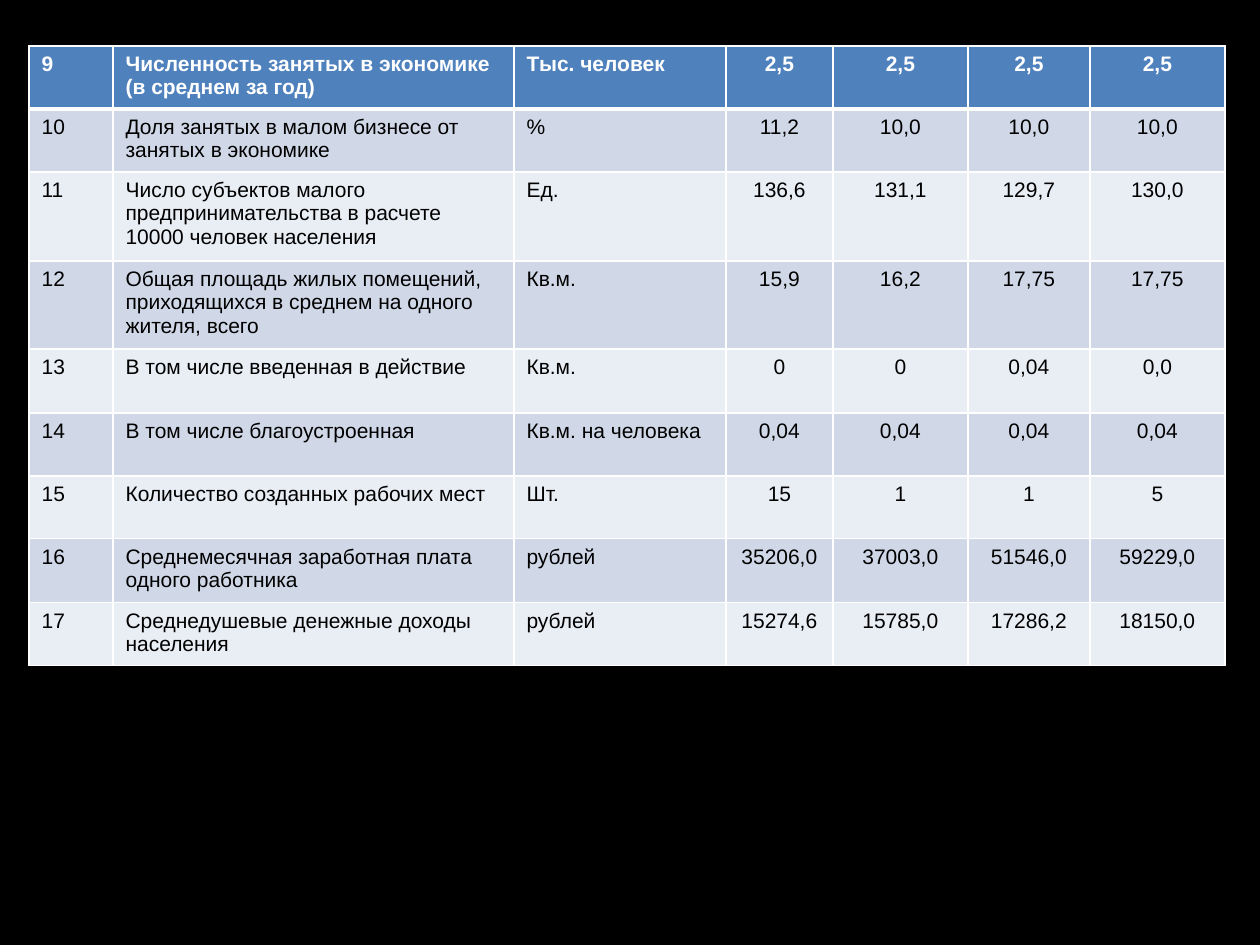
from lxml.etree import SubElement
from pptx import Presentation
from pptx.dml.color import RGBColor as Rgb
from pptx.enum.text import PP_ALIGN as Align
from pptx.oxml.ns import qn
from pptx.util import Pt

INDICATORS = [
    ("9", "Численность занятых в экономике (в среднем за год)", "Тыс. человек", "2,5", "2,5", "2,5", "2,5"),
    ("10", "Доля занятых в малом бизнесе от занятых в экономике", "%", "11,2", "10,0", "10,0", "10,0"),
    ("11", "Число субъектов малого предпринимательства в расчете 10000 человек населения", "Ед.",
     "136,6", "131,1", "129,7", "130,0"),
    ("12", "Общая площадь жилых помещений, приходящихся в среднем на одного жителя, всего", "Кв.м.",
     "15,9", "16,2", "17,75", "17,75"),
    ("13", "В том числе введенная в действие", "Кв.м.", "0", "0", "0,04", "0,0"),
    ("14", "В том числе благоустроенная", "Кв.м. на человека", "0,04", "0,04", "0,04", "0,04"),
    ("15", "Количество созданных рабочих мест", "Шт.", "15", "1", "1", "5"),
    ("16", "Среднемесячная заработная плата одного работника", "рублей",
     "35206,0", "37003,0", "51546,0", "59229,0"),
    ("17", "Среднедушевые денежные доходы населения", "рублей",
     "15274,6", "15785,0", "17286,2", "18150,0"),
]
COLORS = {
    "background": "000000", "header": "4F81BD", "odd": "D0D8E8", "even": "E9EDF4",
    "header_text": "FFFFFF", "text": "000000", "border": "FFFFFF",
}
COLUMN_WIDTHS = [84, 401, 212, 107, 135, 122, 135]
ROW_HEIGHTS = [63, 63, 89, 88, 64, 63, 63, 64, 63]
LEFT, TOP = 29, 46
FIRST_VALUE_COLUMN = 3
PX = 914400 // 126


def color(key):
    return Rgb.from_string(COLORS[key])


def write(cell, text, *, ink="text", bold=False, align=Align.LEFT):
    paragraph = cell.text_frame.paragraphs[0]
    paragraph.alignment = align
    run = paragraph.add_run()
    run.text = text
    run.font.name = "Arial"
    run.font.size = Pt(12)
    run.font.bold = bold
    run.font.color.rgb = color(ink)


def outline(cell, top, bottom):
    properties = cell._tc.get_or_add_tcPr()
    sides = {"a:lnL": 1, "a:lnR": 1, "a:lnT": top, "a:lnB": bottom}
    for position, (side, width) in enumerate(sides.items()):
        line = SubElement(properties, qn(side), w=str(Pt(width)))
        solid = SubElement(line, qn("a:solidFill"))
        SubElement(solid, qn("a:srgbClr"), val=COLORS["border"])
        properties.insert(position, line)


def main():
    deck = Presentation()
    deck.slide_width, deck.slide_height = 1260 * PX, 945 * PX
    slide = deck.slides.add_slide(deck.slide_layouts[6])
    slide.background.fill.solid()
    slide.background.fill.fore_color.rgb = color("background")

    indicators = slide.shapes.add_table(
        len(INDICATORS), len(COLUMN_WIDTHS), LEFT * PX, TOP * PX,
        sum(COLUMN_WIDTHS) * PX, sum(ROW_HEIGHTS) * PX).table
    for column, width in zip(indicators.columns, COLUMN_WIDTHS):
        column.width = width * PX
    for row, height in zip(indicators.rows, ROW_HEIGHTS):
        row.height = height * PX

    for r, indicator in enumerate(INDICATORS):
        header = r == 0
        band = "header" if header else "odd" if r % 2 else "even"
        for c, text in enumerate(indicator):
            cell = indicators.cell(r, c)
            cell.fill.solid()
            cell.fill.fore_color.rgb = color(band)
            outline(cell, top=3 if r == 1 else 1, bottom=3 if header else 1)
            write(cell, text, bold=header, ink="header_text" if header else "text",
                  align=Align.CENTER if c >= FIRST_VALUE_COLUMN else Align.LEFT)

    deck.save("out.pptx")


if __name__ == "__main__":
    main()
